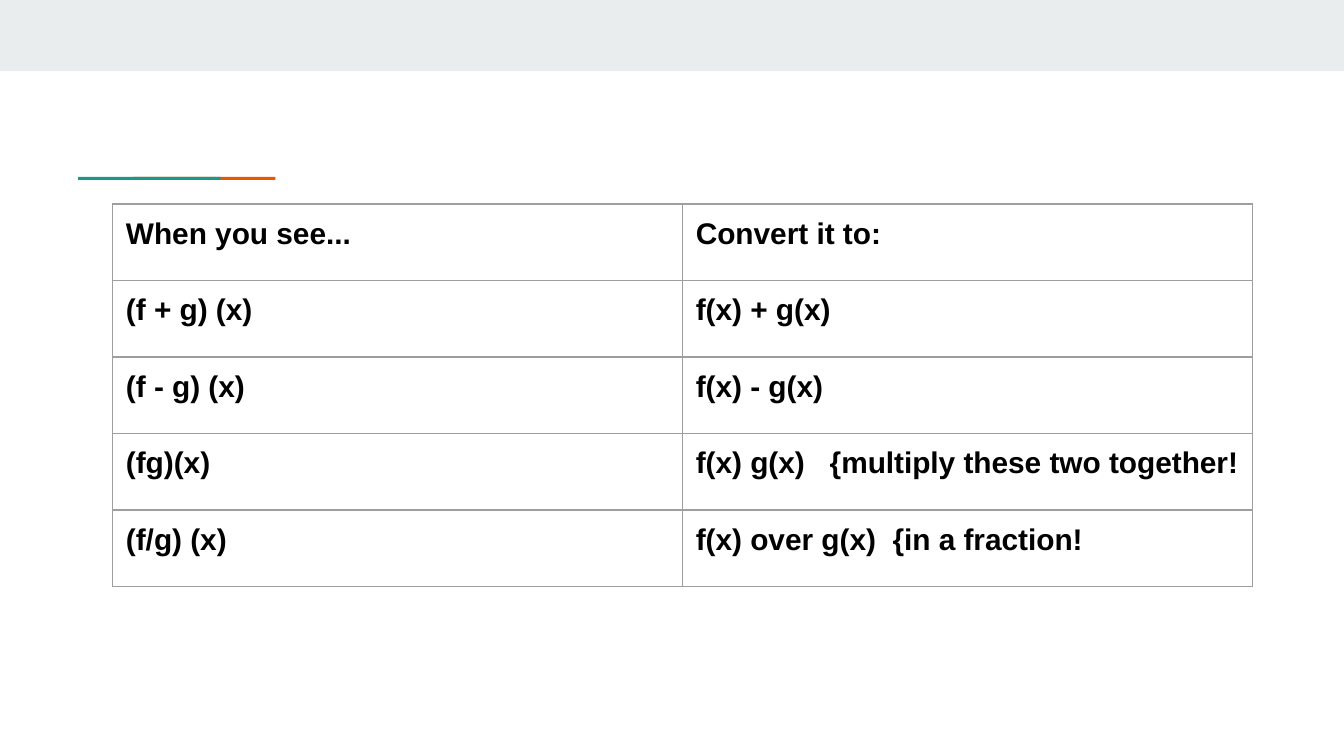
from dataclasses import dataclass

from lxml.etree import SubElement
from pptx import Presentation
from pptx.dml.color import RGBColor as Color
from pptx.enum.shapes import MSO_SHAPE as Shape
from pptx.oxml.ns import qn
from pptx.util import Pt


@dataclass(frozen=True)
class Theme:
    font: str = "Arial"
    text_size: float = 16
    text: str = "000000"
    band: str = "E9EDEE"
    teal: str = "1A9988"
    orange: str = "EB5600"
    border: str = "9E9E9E"
    border_width: float = 0.75
    cell_inset: float = 7.2


class SlideBuilder:
    def __init__(self, page, theme):
        self.page = page
        self.theme = theme

    def bar(self, left, top, width, height, color):
        box = self.page.shapes.add_shape(
            Shape.RECTANGLE, Pt(left), Pt(top), Pt(width), Pt(height)
        )
        box.shadow.inherit = False
        box.fill.solid()
        box.fill.fore_color.rgb = Color.from_string(color)
        box.line.fill.background()

    def table(self, left, top, column_width, row_height, rows):
        column_count = len(rows[0])
        table = self.page.shapes.add_table(
            len(rows), column_count, Pt(left), Pt(top),
            Pt(column_width * column_count), Pt(row_height * len(rows)),
        ).table
        table.first_row = False
        table.horz_banding = False
        for column in table.columns:
            column.width = Pt(column_width)
        for row, texts in zip(table.rows, rows):
            row.height = Pt(row_height)
            for cell, text in zip(row.cells, texts):
                self.cell(cell, text)

    def cell(self, cell, text):
        inset = Pt(self.theme.cell_inset)
        cell.margin_left = cell.margin_right = inset
        cell.margin_top = cell.margin_bottom = inset
        self.borders(cell)
        cell.fill.background()
        cell.text = text
        font = cell.text_frame.paragraphs[0].font
        font.name = self.theme.font
        font.size = Pt(self.theme.text_size)
        font.bold = True
        font.color.rgb = Color.from_string(self.theme.text)

    def borders(self, cell):
        properties = cell._tc.get_or_add_tcPr()
        for side in ("lnL", "lnR", "lnT", "lnB"):
            line = SubElement(
                properties, qn(f"a:{side}"), w=str(Pt(self.theme.border_width))
            )
            fill = SubElement(line, qn("a:solidFill"))
            SubElement(fill, qn("a:srgbClr"), val=self.theme.border)


def main():
    deck = Presentation()
    deck.slide_width, deck.slide_height = Pt(720), Pt(405)
    theme = Theme()
    builder = SlideBuilder(deck.slides.add_slide(deck.slide_layouts[6]), theme)

    builder.bar(0, 0, 720, 38.2, theme.band)

    accent_left, accent_step = 41.8, 29.3
    for step, color in ((1, theme.orange), (0, theme.teal)):
        builder.bar(accent_left + step * accent_step, 94.8, 76.4, 1.6, color)

    conversions = [
        ("When you see...", "Convert it to:"),
        ("(f + g) (x)", "f(x) + g(x)"),
        ("(f - g) (x)", "f(x) - g(x)"),
        ("(fg)(x)", "f(x) g(x)   {multiply these two together!"),
        ("(f/g) (x)", "f(x) over g(x)  {in a fraction!"),
    ]
    builder.table(60.3, 109.3, 305.3, 41, conversions)

    deck.save("out.pptx")


if __name__ == "__main__":
    main()
